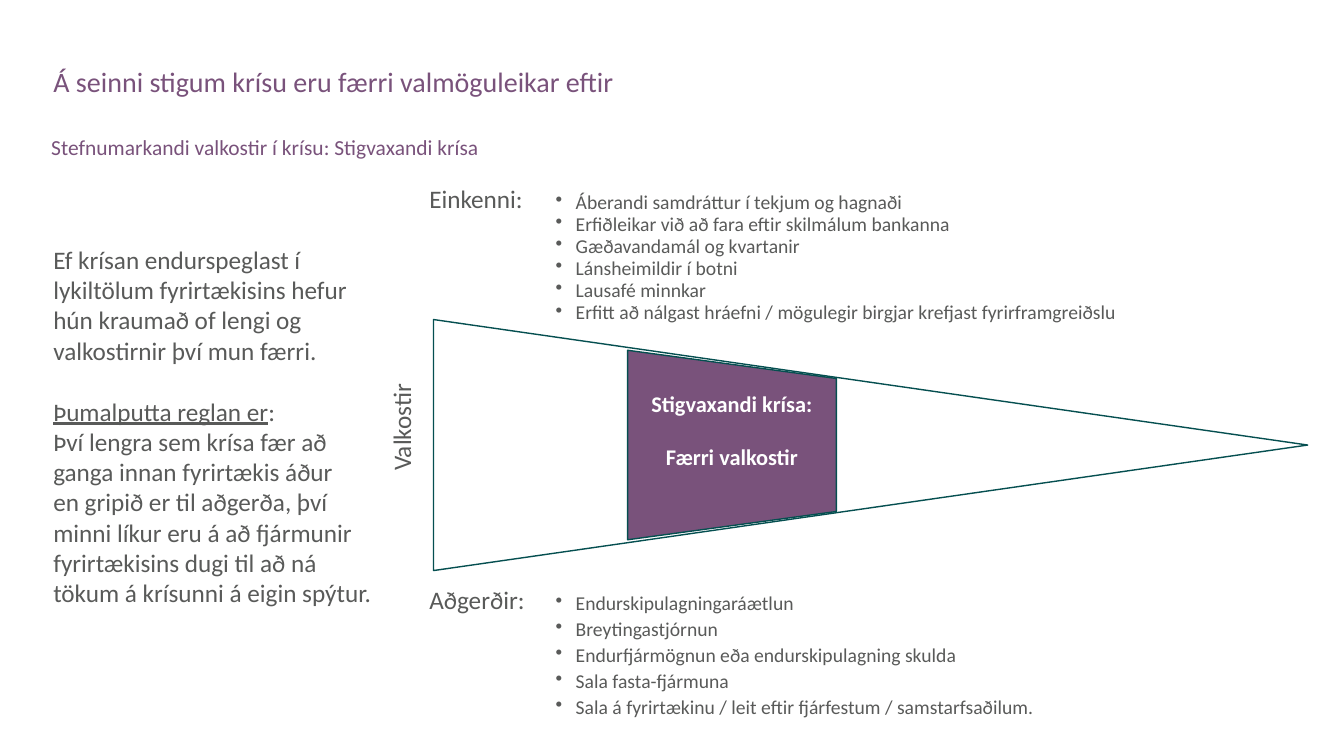
from lxml import etree
from pptx import Presentation
from pptx.dml.color import RGBColor
from pptx.enum import shapes, text
from pptx.oxml import ns
from pptx.util import Inches, Pt

COLORS = {"purple": "79527B", "grey": "595A59", "teal": "054F50", "white": "FFFFFF"}


def fill_text(box, lines, size, color, spacing=1.0, gap=0, bold=False,
              align=text.PP_ALIGN.LEFT, inset=(0.1, 0.05), bullets=False):
    """Write one paragraph per line, with the gap in points between paragraphs."""
    frame = box.text_frame
    frame.word_wrap = True
    frame.auto_size = text.MSO_AUTO_SIZE.NONE
    frame.vertical_anchor = text.MSO_ANCHOR.TOP
    frame.margin_left = frame.margin_right = Inches(inset[0])
    frame.margin_top = frame.margin_bottom = Inches(inset[1])
    frame.text = "\n".join(lines)
    for index, para in enumerate(frame.paragraphs):
        para.alignment = align
        para.line_spacing = spacing
        para.space_before = Pt(gap if index else 0)
        if bullets:
            props = para._p.get_or_add_pPr()
            props.set("marL", str(Inches(0.2)))
            props.set("indent", str(-Inches(0.2)))
            bullet_color = etree.SubElement(props, ns.qn("a:buClr"))
            etree.SubElement(bullet_color, ns.qn("a:srgbClr"), val=COLORS[color])
            etree.SubElement(props, ns.qn("a:buChar"), char="•")
        for span in para.runs:
            span.font.name = "Calibri"
            span.font.size = Pt(size)
            span.font.bold = bold
            span.font.color.rgb = RGBColor.from_string(COLORS[color])
    return frame


def add_box(left, top, width, height):
    return slide.shapes.add_textbox(Inches(left), Inches(top), Inches(width), Inches(height))


deck = Presentation()
deck.slide_width, deck.slide_height = Inches(13.33), Inches(7.5)
slide = deck.slides.add_slide(deck.slide_layouts[5])

# Headings
title = slide.shapes.title
title.left, title.top = Inches(0.43), Inches(0.63)
title.width, title.height = Inches(12.54), Inches(0.64)
fill_text(title, ["Á seinni stigum krísu eru færri valmöguleikar eftir"], 20, "purple", 0.9)
fill_text(add_box(0.41, 1.35, 12.56, 0.28),
          ["Stefnumarkandi valkostir í krísu: Stigvaxandi krísa"], 15.3, "purple", 0.7)

# Rule of thumb on the left
message = fill_text(add_box(0.43, 1.79, 3.49, 4.87), [
    "Ef krísan endurspeglast í lykiltölum fyrirtækisins hefur hún\u00a0kraumað of lengi "
    "og valkostirnir því mun færri.",
    "Þumalputta reglan er",
    "Því lengra sem krísa fær að ganga innan fyrirtækis áður\ven gripið er til aðgerða, "
    "því minni líkur eru á að fjármunir fyrirtækisins dugi til að ná tökum á krísunni "
    "á eigin spýtur.",
], 18, "grey")
message.vertical_anchor = text.MSO_ANCHOR.MIDDLE
rule_heading = message.paragraphs[1]
rule_heading.space_before = Pt(22)
rule_heading.runs[0].font.underline = True
colon = rule_heading.add_run()
colon.text = ":"
colon.font.name, colon.font.size = "Calibri", Pt(18)
colon.font.color.rgb = RGBColor.from_string(COLORS["grey"])

# Funnel of options with the current stage
for kind, left, top, width, height, adjustment, fill in [
    (shapes.MSO_SHAPE.ISOSCELES_TRIANGLE, 7.39, 0.08, 2.49, 8.67, 0.5, "white"),
    (shapes.MSO_SHAPE.TRAPEZOID, 6.32, 3.38, 1.88, 2.07, 0.149, "purple"),
]:
    funnel = slide.shapes.add_shape(kind, Inches(left), Inches(top), Inches(width), Inches(height))
    funnel.rotation = 90
    funnel.adjustments[0] = adjustment
    funnel.shadow.inherit = False
    funnel.fill.solid()
    funnel.fill.fore_color.rgb = RGBColor.from_string(COLORS[fill])
    funnel.line.color.rgb = RGBColor.from_string(COLORS["teal"])
    funnel.line.width = Pt(1)

fill_text(add_box(6.23, 3.9, 2.06, 1.01), ["Stigvaxandi krísa:", "Færri valkostir"], 16, "white",
          0.82, gap=22, bold=True, align=text.PP_ALIGN.CENTER, inset=(0.04, 0.02))
axis_label = add_box(2.81, 4.04, 2.34, 0.4)
axis_label.rotation = 270
fill_text(axis_label, ["Valkostir"], 18, "grey", align=text.PP_ALIGN.CENTER)

# Labelled lists above and below the funnel
for label, top, height, gap, items in [
    ("Einkenni:", 1.77, 0.92, 0, [
        "Áberandi samdráttur í tekjum og hagnaði",
        "Erfiðleikar við að fara eftir skilmálum bankanna",
        "Gæðavandamál og kvartanir",
        "Lánsheimildir í botni",
        "Lausafé minnkar",
        "Erfitt að nálgast hráefni / mögulegir birgjar krefjast fyrirframgreiðslu",
    ]),
    ("Aðgerðir:", 5.75, 1.1, 2.8, [
        "Endurskipulagningaráætlun",
        "Breytingastjórnun",
        "Endurfjármögnun eða endurskipulagning skulda",
        "Sala fasta-fjármuna",
        "Sala á fyrirtækinu / leit eftir fjárfestum / samstarfsaðilum.",
    ]),
]:
    fill_text(add_box(4.16, top, 1.56, 0.4), [label], 18, "grey")
    fill_text(add_box(5.47, top + 0.11, 7.4, height), items, 14, "grey", 0.94, gap=gap,
              inset=(0.04, 0.02), bullets=True)

deck.save("out.pptx")
